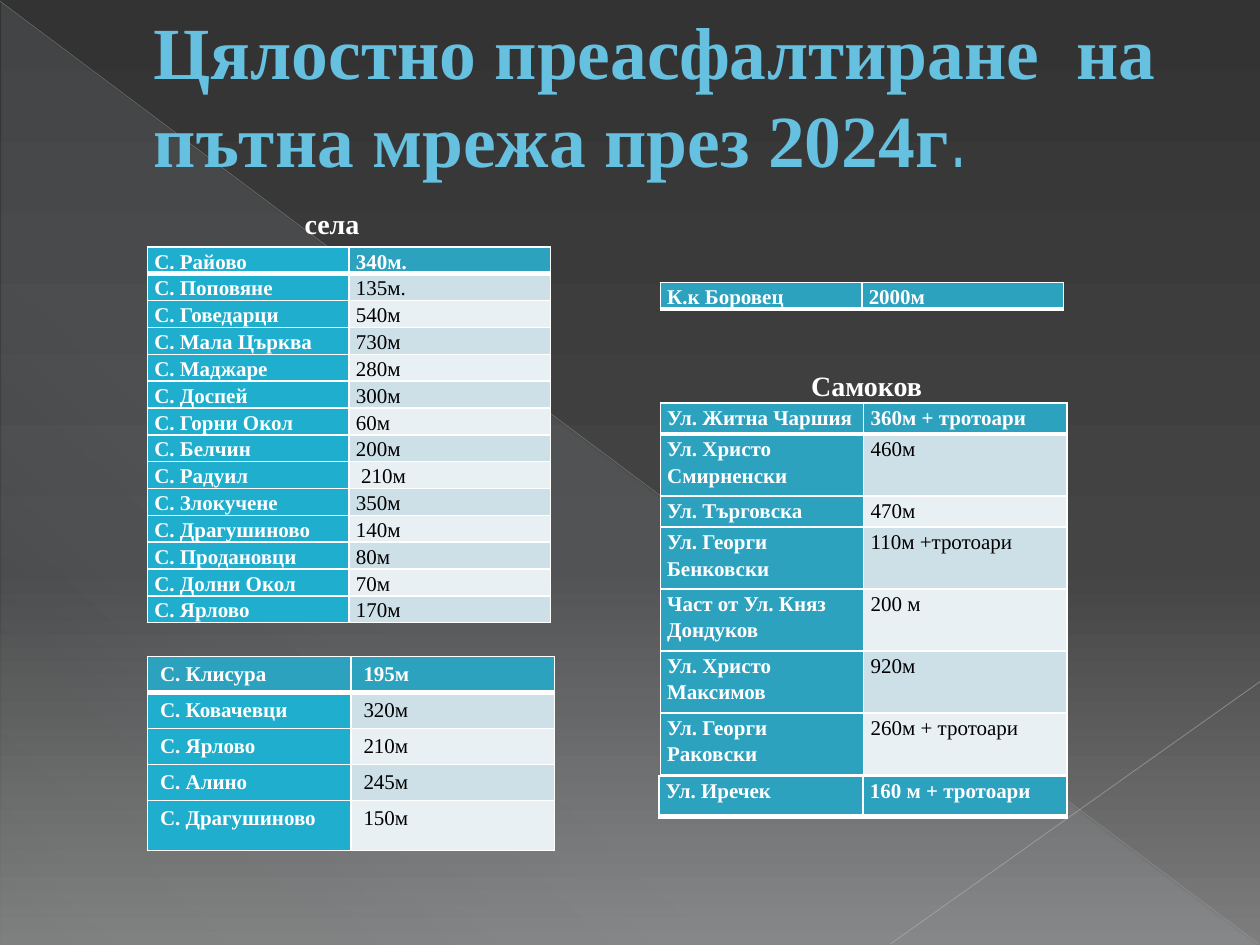
from dataclasses import dataclass
from typing import Any

from lxml import etree
from pptx import Presentation
from pptx.dml.color import RGBColor
from pptx.enum.shapes import MSO_CONNECTOR, MSO_SHAPE
from pptx.enum.text import MSO_ANCHOR, MSO_AUTO_SIZE, PP_ALIGN
from pptx.oxml.ns import qn
from pptx.util import Inches, Pt

STRAIGHT = MSO_CONNECTOR.STRAIGHT
TRIANGLE = MSO_SHAPE.RIGHT_TRIANGLE
MIDDLE = MSO_ANCHOR.MIDDLE
LEFT = PP_ALIGN.LEFT
NO_FIT, GROW = MSO_AUTO_SIZE.NONE, MSO_AUTO_SIZE.SHAPE_TO_FIT_TEXT

COLORS = {
    "white": "FFFFFF", "black": "000000", "title": "66C0E0", "outline": "1F7084",
    "teal": "2DA2BF", "cyan": "1FAECD", "band": "CDE0E8", "pale": "E8F0F4",
    "night": "333333", "dusk": "444444", "ash": "7D7D7D", "ice": "DEF5FA",
    "long_line": "B9B9B9", "short_line": "C1C1C1",
}
CELL = 0.1  # inches per grid column and row

VILLAGES = [
    ("С. Райово", "340м."), ("С. Поповяне", "135м."), ("С. Говедарци", "540м"),
    ("С. Мала Църква", "730м"), ("С. Маджаре", "280м"), ("С. Доспей", "300м"),
    ("С. Горни Окол", "60м"), ("С. Белчин", "200м"), ("С. Радуил", " 210м"),
    ("С. Злокучене", "350м"), ("С. Драгушиново", "140м"), ("С. Продановци", "80м"),
    ("С. Долни Окол", "70м"), ("С. Ярлово", "170м"),
]
MORE_VILLAGES = [
    ("С. Клисура", "195м"), ("С. Ковачевци", "320м"), ("С. Ярлово", "210м"),
    ("С. Алино", "245м"), ("С. Драгушиново", "150м"),
]
STREETS = [
    ("Ул. Житна Чаршия", "360м + тротоари"), ("Ул. Христо Смирненски", "460м"),
    ("Ул. Търговска", "470м"), ("Ул. Георги Бенковски", "110м +тротоари"),
    ("Част от Ул. Княз Дондуков", "200 м"), ("Ул. Христо Максимов", "920м"),
    ("Ул. Георги Раковски", "260м + тротоари"),
]
LAST_STREET = [("Ул. Иречек", "160 м + тротоари")]
RESORT = [("К.к Боровец", "2000м")]


def grid(n):
    return Inches(n * CELL)


def rgb(name):
    return RGBColor.from_string(COLORS[name])


def set_all(obj, values):
    for key, value in values.items():
        setattr(obj, key, value)


def add_color(parent, name, alpha=100):
    clr = etree.SubElement(parent, qn("a:srgbClr"), val=COLORS[name])
    if alpha < 100:
        etree.SubElement(clr, qn("a:alpha"), val=str(alpha * 1000))


def make_line(tag, color, width):
    ln = etree.Element(qn(tag), w=str(Pt(width)))
    add_color(etree.SubElement(ln, qn("a:solidFill")), color)
    return ln


@dataclass
class Deck:
    """Style and current slide; lengths are grid columns and rows."""
    s: Any
    font: str = "Times New Roman"

    def gradient(self, fill, owner, stops, angle):
        """Give a fill stops of (position, colour, alpha), angle clockwise."""
        fill.gradient()
        fill.gradient_angle = 360 - angle
        stop_list = next(owner.iter(qn("a:gsLst")))
        for old in list(stop_list):
            stop_list.remove(old)
        for pos, color, alpha in stops:
            gs = etree.SubElement(stop_list, qn("a:gs"), pos=str(pos * 1000))
            add_color(gs, color, alpha)

    def background(self, stops):
        self.gradient(self.s.background.fill, self.s.element, stops, 90)

    def triangle(self, x, y, w, h, stops):
        sp = self.s.shapes.add_shape(TRIANGLE, *map(grid, (x, y, w, h)))
        sp.shadow.inherit = False
        sp.line.fill.background()
        self.gradient(sp.fill, sp.element, stops, 133)

    def line(self, x1, y1, x2, y2, color, width, alpha):
        ln = self.s.shapes.add_connector(STRAIGHT, *map(grid, (x1, y1, x2, y2)))
        ln.line.width = Pt(width)
        ln.line.color.rgb = rgb(color)
        clr = next(ln.element.spPr.iter(qn("a:srgbClr")))
        etree.SubElement(clr, qn("a:alpha"), val=str(alpha * 1000))
        etree.SubElement(ln.element.spPr, qn("a:effectLst"))

    def run(self, p, text, size, color="white", bold=True, font=None):
        r = p.add_run()
        r.text = text
        set_all(r.font, {"size": Pt(size), "bold": bold, "name": font or self.font})
        r.font.color.rgb = rgb(color)
        return r

    def title(self, x, y, w, h, text, ending):
        sp = self.s.shapes.title
        set_all(sp, dict(zip(("left", "top", "width", "height"),
                             map(grid, (x, y, w, h)))))
        self.s.shapes.element.append(sp.element)  # in front of the backdrop
        tf = sp.text_frame
        set_all(tf, {"word_wrap": True, "auto_size": NO_FIT,
                     "vertical_anchor": MIDDLE})
        p = tf.paragraphs[0]
        p.alignment = LEFT
        set_all_indents = {"marL": str(grid(5.3)), "indent": "0"}
        for key, value in set_all_indents.items():
            p._p.get_or_add_pPr().set(key, value)
        for part, bold, font in ((text, True, None),
                                 (ending, False, "TeX Gyre Adventor")):
            r = self.run(p, part, 42, "title", bold, font)
            r.font._element.insert(0, make_line("a:ln", "outline", 0.5))

    def label(self, x, y, w, h, text):
        tf = self.s.shapes.add_textbox(*map(grid, (x, y, w, h))).text_frame
        set_all(tf, {"word_wrap": True, "auto_size": GROW})
        self.run(tf.paragraphs[0], text, 16)

    def table(self, x, y, w, rows, heights, side="teal", corner="teal", roomy=False):
        """Two equal columns: names on a coloured side, lengths on bands."""
        frame = self.s.shapes.add_table(len(rows), 2, grid(x), grid(y),
                                        grid(w), grid(sum(heights)))
        tbl = frame.table
        for i, (texts, height) in enumerate(zip(rows, heights)):
            tbl.rows[i].height = grid(height)
            value_fill = "band" if i % 2 else "pale"
            fills = (side, value_fill) if i else (corner, "teal")
            for j, (text, fill) in enumerate(zip(texts, fills)):
                plain = i > 0 and j == 1
                self.cell(tbl.cell(i, j), text, fill, plain, i == 0, roomy)

    def cell(self, cell, text, fill, plain, head, roomy):
        cell.fill.solid()
        cell.fill.fore_color.rgb = rgb(fill)
        p = cell.text_frame.paragraphs[0]
        if not roomy:
            set_all(cell, {"margin_left": grid(0.55), "margin_right": grid(0.55),
                           "margin_top": 0, "margin_bottom": 0})
            p.line_spacing = 1.15
        self.run(p, text, 12, "black" if plain else "white", not plain)
        edges = {"a:lnL": 1, "a:lnR": 1, "a:lnT": 1, "a:lnB": 3 if head else 1}
        if not head:
            del edges["a:lnT"]
        tc_pr = cell._tc.get_or_add_tcPr()
        for k, (tag, width) in enumerate(edges.items()):
            tc_pr.insert(k, make_line(tag, "white", width))


def main():
    prs = Presentation()
    prs.slide_width, prs.slide_height = grid(100), grid(75)
    deck = Deck(prs.slides.add_slide(prs.slide_layouts[5]))

    deck.background([(0, "night", 100), (60, "dusk", 100), (100, "ash", 100)])
    deck.triangle(0.1, 0.2, 99.8, 74.8,
                  [(0, "ice", 10), (70, "ice", 8), (100, "ice", 1)])
    deck.line(0, 0.1, 99.9, 74.9, "long_line", 0.39, 35)
    deck.line(100, 54.1, 70.7, 74.9, "short_line", 0.47, 45)
    deck.title(5.9, -0.2, 90, 15.3,
               "Цялостно преасфалтиране  на пътна мрежа през 2024г", ".")

    deck.table(11.7, 19.6, 32, VILLAGES, [2] + [2.13] * 13, "cyan", "cyan")
    deck.table(11.7, 52.1, 32.3, MORE_VILLAGES, [2.85] * 4 + [4], "cyan", roomy=True)
    deck.table(52.4, 32, 32.3, STREETS, [2.46, 4.92] * 2 + [4.92] * 3)
    deck.table(52.3, 61.6, 32.4, LAST_STREET, [3.2])
    deck.table(52.4, 22.4, 32, RESORT, [2.1])
    deck.label(63.4, 28.8, 17.3, 3.7, "Самоков")
    deck.label(23.2, 15.9, 19.7, 3.7, "села")
    prs.save("out.pptx")


if __name__ == "__main__":
    main()
